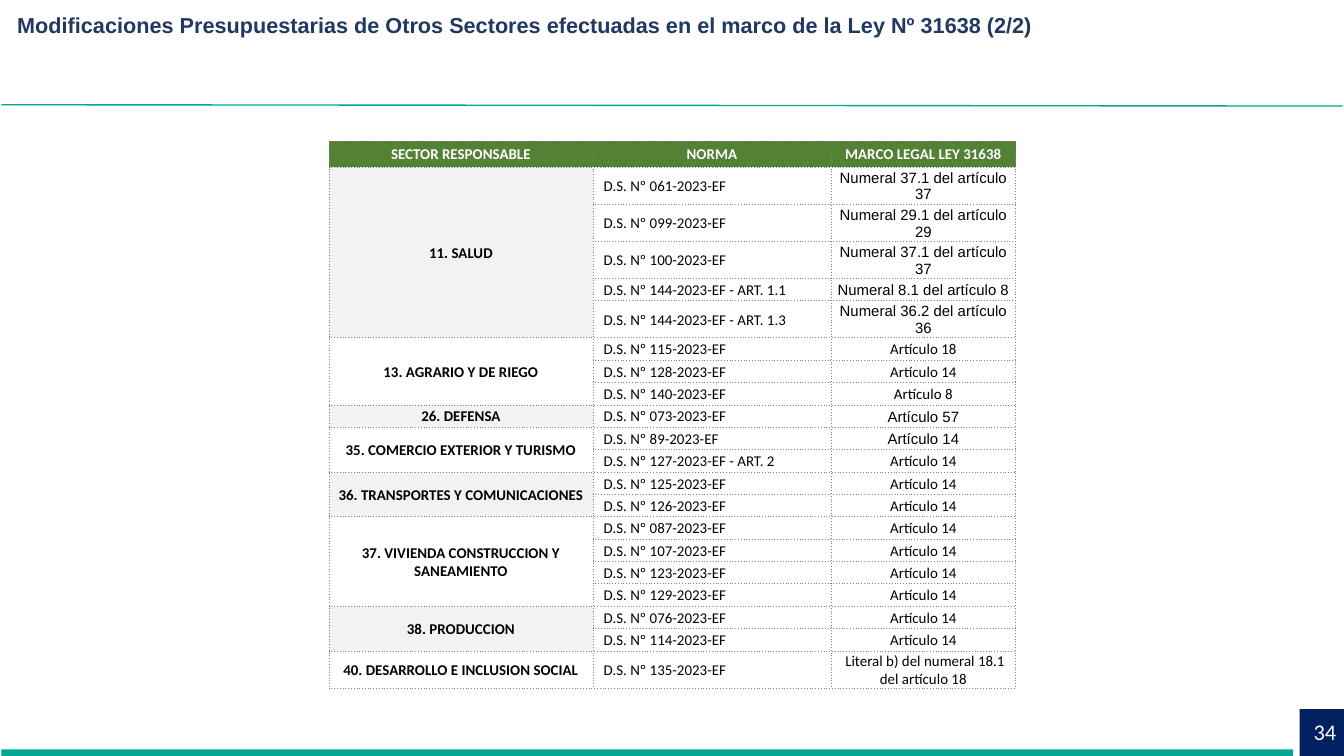
import pptx
import pptx.dml.color
import pptx.enum.dml
import pptx.enum.shapes
import pptx.enum.text
import pptx.oxml
import pptx.oxml.ns
import pptx.util

Pt = pptx.util.Pt
ALIGN = pptx.enum.text.PP_ALIGN
ANCHOR = pptx.enum.text.MSO_ANCHOR

HUES = {"teal": "00A792", "navy": "002060", "title": "203864", "green": "548235",
        "band": "F2F2F2", "grid": "808080", "white": "FFFFFF", "black": "000000"}

HEADS = ["SECTOR RESPONSABLE", "NORMA", "MARCO LEGAL LEY 31638"]
SECTORS = [
    ("11. SALUD", [
        ("061-2023-EF", "Numeral 37.1 del artículo 37"),
        ("099-2023-EF", "Numeral 29.1 del artículo 29"),
        ("100-2023-EF", "Numeral 37.1 del artículo 37"),
        ("144-2023-EF - ART. 1.1", "Numeral 8.1 del artículo 8"),
        ("144-2023-EF - ART. 1.3", "Numeral 36.2 del artículo 36")]),
    ("13. AGRARIO Y DE RIEGO", [
        ("115-2023-EF", "Artículo 18"),
        ("128-2023-EF", "Artículo 14"),
        ("140-2023-EF", "Artículo 8")]),
    ("26. DEFENSA", [("073-2023-EF", "Artículo 57")]),
    ("35. COMERCIO EXTERIOR Y TURISMO", [
        ("89-2023-EF", "Artículo 14"),
        ("127-2023-EF - ART. 2", "Artículo 14")]),
    ("36. TRANSPORTES Y COMUNICACIONES", [
        ("125-2023-EF", "Artículo 14"),
        ("126-2023-EF", "Artículo 14")]),
    ("37. VIVIENDA CONSTRUCCION Y SANEAMIENTO", [
        ("087-2023-EF", "Artículo 14"),
        ("107-2023-EF", "Artículo 14"),
        ("123-2023-EF", "Artículo 14"),
        ("129-2023-EF", "Artículo 14")]),
    ("38. PRODUCCION", [
        ("076-2023-EF", "Artículo 14"),
        ("114-2023-EF", "Artículo 14")]),
    ("40. DESARROLLO E INCLUSION SOCIAL", [
        ("135-2023-EF", " Literal b) del numeral 18.1 del artículo 18")]),
]
ARIAL = {"073-2023-EF", "89-2023-EF"}
WIDTHS = [141.6, 127.6, 99.2]


def hue(name):
    return pptx.dml.color.RGBColor.from_string(HUES[name])


def write(frame, text, size, face, color, bold, align):
    frame.text = text
    para = frame.paragraphs[0]
    para.alignment = align
    font = para.runs[0].font
    font.size, font.name, font.bold = Pt(size), face, bold
    font.color.rgb = hue(color)


def add_bar(slide, box, color):
    bar = slide.shapes.add_shape(pptx.enum.shapes.MSO_SHAPE.RECTANGLE, *map(Pt, box))
    bar.shadow.inherit = False
    bar.fill.solid()
    bar.fill.fore_color.rgb = hue(color)
    bar.line.fill.background()


def add_rule(slide, ends):
    rule = slide.shapes.add_connector(pptx.enum.shapes.MSO_CONNECTOR.STRAIGHT, *map(Pt, ends))
    rule.line.color.rgb = hue("teal")
    rule.line.width = Pt(0.75)
    rule._element.spPr.append(pptx.oxml.parse_xml(
        f'<a:effectLst {pptx.oxml.ns.nsdecls("a")}/>'))


def add_text(slide, box, text, size, face, color, bold, align, anchor, top):
    frame = slide.shapes.add_textbox(*map(Pt, box)).text_frame
    frame.word_wrap = True
    frame.vertical_anchor = anchor
    frame.margin_top = Pt(top)
    write(frame, text, size, face, color, bold, align)


def add_edges(cell):
    props = cell._tc.get_or_add_tcPr()
    for spot, side in enumerate(["lnL", "lnR", "lnT", "lnB"]):
        props.insert(spot, pptx.oxml.parse_xml(
            f'<a:{side} {pptx.oxml.ns.nsdecls("a")} w="{Pt(0.5)}"><a:solidFill>'
            f'<a:srgbClr val="{HUES["grid"]}"/></a:solidFill>'
            f'<a:prstDash val="sysDot"/></a:{side}>'))


def fill_cell(cell, text, face="Calibri", color="black", bold=False,
              align=ALIGN.CENTER, back=None, left=0.72):
    cell.margin_left = Pt(left)
    cell.margin_right = cell.margin_top = Pt(0.72)
    cell.margin_bottom = Pt(0)
    cell.vertical_anchor = ANCHOR.MIDDLE
    if back:
        cell.fill.solid()
        cell.fill.fore_color.rgb = hue(back)
    else:
        cell.fill.background()
    write(cell.text_frame, text, 8, face, color, bold, align)


def add_grid(slide):
    count = 1 + sum(len(norms) for _, norms in SECTORS)
    box = (176.4, 75.6, sum(WIDTHS), 12 * count + 4)
    table = slide.shapes.add_table(count, len(HEADS), *map(Pt, box)).table
    table.first_row = table.horz_banding = False
    for col, width in zip(table.columns, WIDTHS):
        col.width = Pt(width)
    for row in table.rows:
        row.height = Pt(12)
    table.rows[0].height = table.rows[count - 1].height = Pt(14)

    for col, head in enumerate(HEADS):
        fill_cell(table.cell(0, col), head, color="white", bold=True, back="green")
    row = 1
    for rank, (sector, norms) in enumerate(SECTORS):
        first = table.cell(row, 0)
        if len(norms) > 1:
            first.merge(table.cell(row + len(norms) - 1, 0))
        fill_cell(first, sector, bold=True, back=None if rank % 2 else "band")
        for norm, law in norms:
            face = "Arial" if norm in ARIAL or law.startswith("Numeral") else "Calibri"
            fill_cell(table.cell(row, 1), f"D.S. Nº {norm}", align=ALIGN.LEFT, left=5.76)
            fill_cell(table.cell(row, 2), law, face=face)
            row += 1
    for cell in table.iter_cells():
        add_edges(cell)


def main():
    deck = pptx.Presentation()
    deck.slide_width, deck.slide_height = Pt(720.72), Pt(405.36)
    slide = deck.slides.add_slide(deck.slide_layouts[6])
    add_rule(slide, (0.72, 56.16, 720, 56.88))
    add_bar(slide, (0.72, 401.76, 692.64, 3.6), "teal")
    add_bar(slide, (696.96, 380.16, 23.76, 25.2), "navy")
    add_text(slide, (561.6, 381.6, 162, 21.6), "34", 12, "Calibri", "white",
             False, ALIGN.RIGHT, ANCHOR.MIDDLE, 3.6)
    add_text(slide, (2.16, 0, 714.96, 55.44),
             "Modificaciones Presupuestarias de Otros Sectores efectuadas en el marco "
             "de la Ley Nº 31638 (2/2)", 11.6, "Arial", "title",
             True, ALIGN.JUSTIFY, ANCHOR.TOP, 6.5)
    add_grid(slide)
    deck.save("out.pptx")


if __name__ == "__main__":
    main()
